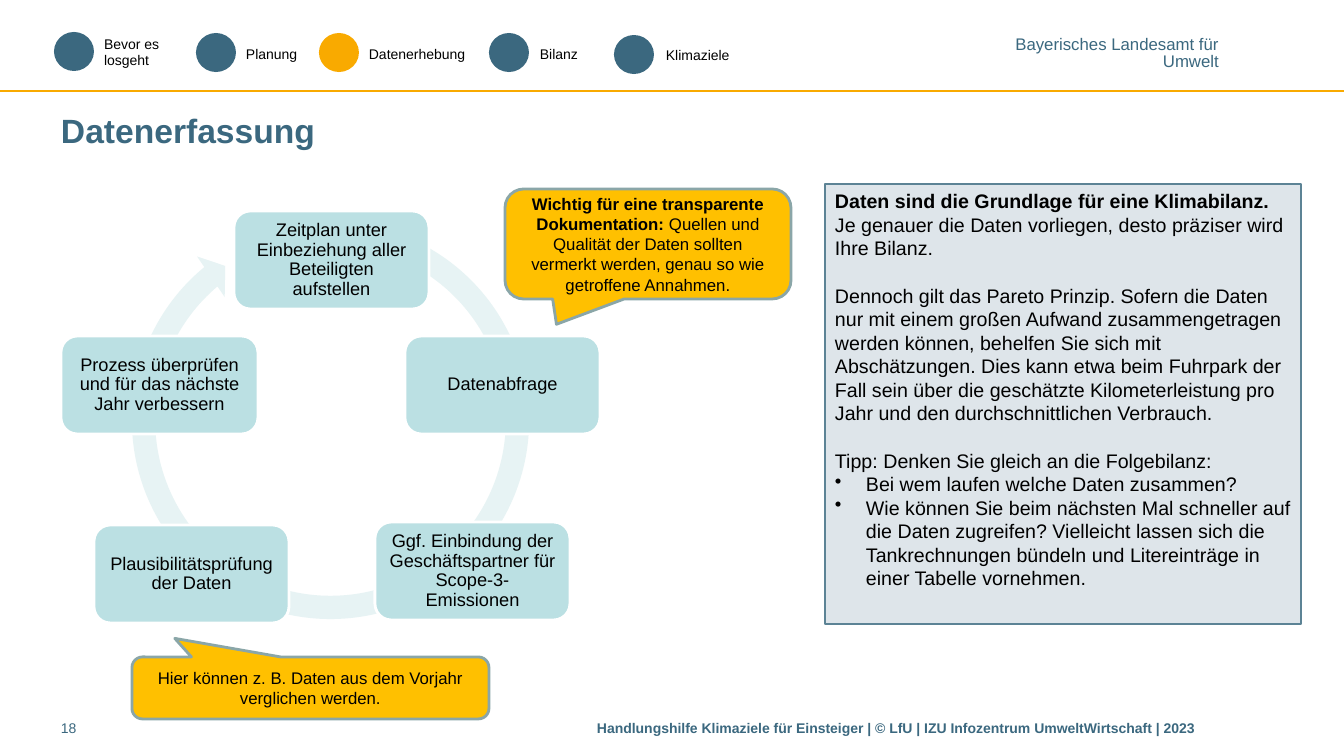
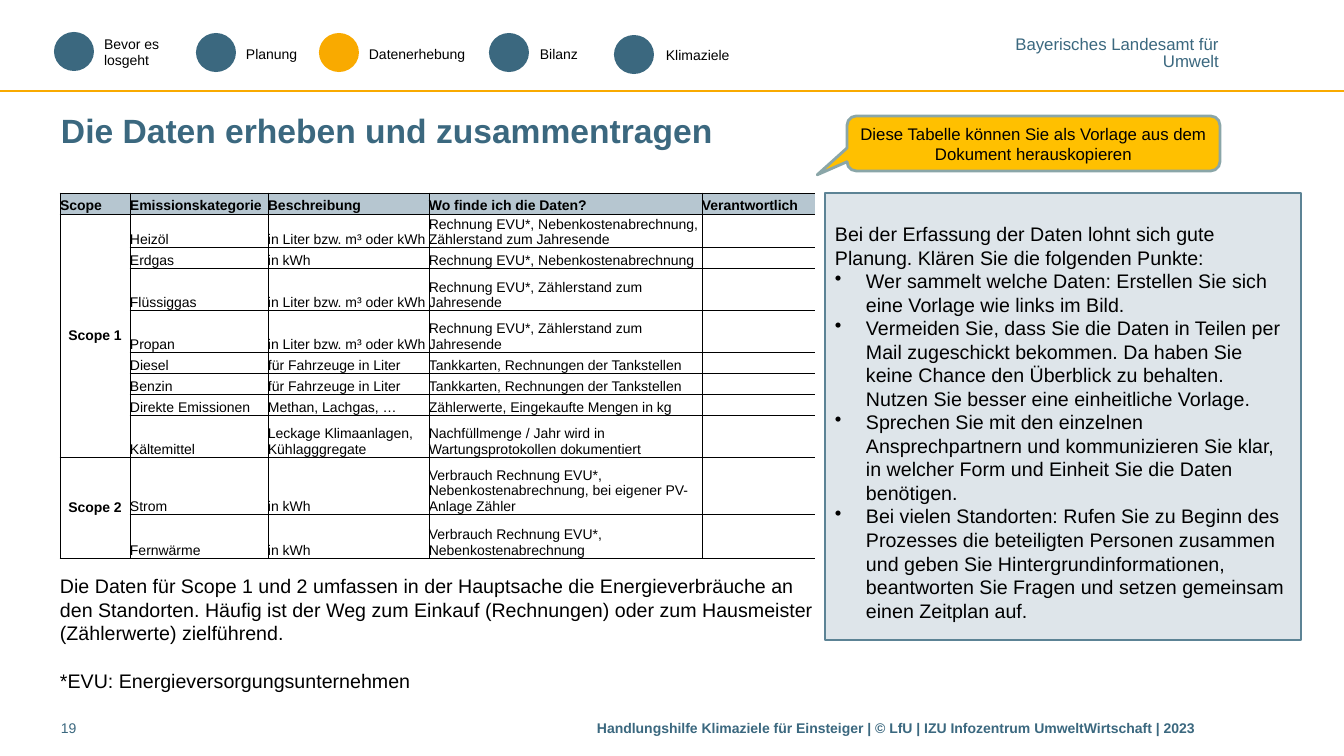
from lxml import etree
from pptx import Presentation
from pptx.dml.color import RGBColor
from pptx.enum.shapes import MSO_CONNECTOR, MSO_SHAPE
from pptx.enum.text import MSO_ANCHOR, PP_ALIGN
from pptx.oxml.ns import qn
from pptx.util import Emu, Pt

OVAL, RECT, ROUND = MSO_SHAPE.OVAL, MSO_SHAPE.RECTANGLE, MSO_SHAPE.ROUNDED_RECTANGLE
CALL, ARROW = MSO_SHAPE.ROUNDED_RECTANGULAR_CALLOUT, MSO_SHAPE.CIRCULAR_ARROW
LINE = MSO_CONNECTOR.STRAIGHT
LEFT, MID, RIGHT = PP_ALIGN.LEFT, PP_ALIGN.CENTER, PP_ALIGN.RIGHT
TOP, CENTER, LOW = MSO_ANCHOR.TOP, MSO_ANCHOR.MIDDLE, MSO_ANCHOR.BOTTOM

BLACK = RGBColor(0x00, 0x00, 0x00)
WHITE = RGBColor(0xFF, 0xFF, 0xFF)
BLUE = RGBColor(0x3B, 0x68, 0x7F)
AMBER = RGBColor(0xF9, 0xAA, 0x00)
GOLD = RGBColor(0xFF, 0xC0, 0x00)
SAGE = RGBColor(0x8A, 0xA6, 0xA8)
PALE = RGBColor(0xDE, 0xE5, 0xEA)
STEEL = RGBColor(0x5C, 0x83, 0x95)
AQUA = RGBColor(0xBB, 0xE0, 0xE3)
MIST = RGBColor(0xE7, 0xF3, 0xF4)
HEAD = RGBColor(0xB6, 0xC6, 0xD0)

FONT = "Arial"
WIDE, HIGH = 1344, 756
PAD = (10, 5, 10, 5)
FLAT = (0, 5, 0, 5)
NONE = (0, 0, 0, 0)
INDENT = 31
GAP = 17

# Shared content: dot left and top, label left and top, label width, lines
STEPS = [
    (54, 32, 94, 30, 83, ["Bevor es", "losgeht"]),
    (196, 33, 236, 41, 150, ["Planung"]),
    (319, 33, 359, 41, 150, ["Datenerhebung"]),
    (489, 33, 530, 41, 150, ["Bilanz"]),
    (614, 35, 656, 42, 150, ["Klimaziele"]),
]
ACTIVE = 2
OFFICE = ["Bayerisches Landesamt für", "Umwelt"]
FOOTER = ("Handlungshilfe Klimaziele für Einsteiger | © LfU | "
          "IZU Infozentrum UmweltWirtschaft | 2023")

# Paragraphs are plain strings or (kind, bold part, plain part)
CYCLE = [
    (234, 211, 195, "Zeitplan unter Einbeziehung aller Beteiligten aufstellen"),
    (405, 336, 195, "Datenabfrage"),
    (375, 522, 195, "Ggf. Einbindung der Geschäftspartner für Scope-3-Emissionen"),
    (94, 525, 195, "Plausibilitätsprüfung der Daten"),
    (61, 336, 197, "Prozess überprüfen und für das nächste Jahr verbessern"),
]
RING = (0.055, 3.31, 138.14, 173.63, 0.058)
BASIS = [
    ("", "Daten sind die Grundlage für eine Klimabilanz.",
     " Je genauer die Daten vorliegen, desto präziser wird Ihre Bilanz."),
    ("gap", "", "Dennoch gilt das Pareto Prinzip. Sofern die Daten nur mit einem "
     "großen Aufwand zusammengetragen werden können, behelfen Sie sich mit "
     "Abschätzungen. Dies kann etwa beim Fuhrpark der Fall sein über die "
     "geschätzte Kilometerleistung pro Jahr und den durchschnittlichen Verbrauch."),
    ("gap", "", "Tipp: Denken Sie gleich an die Folgebilanz:"),
    ("dot", "", "Bei wem laufen welche Daten zusammen?"),
    ("dot", "", "Wie können Sie beim nächsten Mal schneller auf die Daten zugreifen? "
     "Vielleicht lassen sich die Tankrechnungen bündeln und Litereinträge in "
     "einer Tabelle vornehmen."),
]
PLAN = [
    "Bei der Erfassung der Daten lohnt sich gute Planung. Klären Sie die "
    "folgenden Punkte:",
    ("dot", "", "Wer sammelt welche Daten: Erstellen Sie sich eine Vorlage wie "
     "links im Bild."),
    ("dot", "", "Vermeiden Sie, dass Sie die Daten in Teilen per Mail zugeschickt "
     "bekommen. Da haben Sie keine Chance den Überblick zu behalten. Nutzen Sie "
     "besser eine einheitliche Vorlage."),
    ("dot", "", "Sprechen Sie mit den einzelnen Ansprechpartnern und kommunizieren "
     "Sie klar, in welcher Form und Einheit Sie die Daten benötigen."),
    ("dot", "", "Bei vielen Standorten: Rufen Sie zu Beginn des Prozesses die "
     "beteiligten Personen zusammen und geben Sie Hintergrundinformationen, "
     "beantworten Sie Fragen und setzen gemeinsam einen Zeitplan auf."),
]
QUALITY = [("", "Wichtig für eine transparente Dokumentation: ",
            "Quellen und Qualität der Daten sollten vermerkt werden, genau so wie "
            "getroffene Annahmen.")]
COMPARE = ["Hier können z. B. Daten aus dem Vorjahr verglichen werden."]
REUSE = ["Diese Tabelle können Sie als Vorlage aus dem Dokument herauskopieren"]
NOTE = [
    "Die Daten für Scope 1 und 2 umfassen in der Hauptsache die Energieverbräuche "
    "an den Standorten. Häufig ist der Weg zum Einkauf (Rechnungen) oder zum "
    "Hausmeister (Zählerwerte) zielführend.",
    ("gap", "", "*EVU: Energieversorgungsunternehmen"),
]
COLS = [70, 138, 161, 273, 113]
ROWS = [21, 33, 21, 42, 42, 21, 21, 21, 42, 57, 44]
SPANS = [(1, 8), (9, 10)]
LITER, FUEL = "in Liter bzw. m³ oder kWh", "für Fahrzeuge in Liter"
METER = "Rechnung EVU*, Zählerstand zum Jahresende"
CARDS = "Tankkarten, Rechnungen der Tankstellen"
DATA = [
    ("Scope", "Emissionskategorie", "Beschreibung", "Wo finde ich die Daten?",
     "Verantwortlich"),
    ("Scope 1", "Heizöl", LITER,
     "Rechnung EVU*, Nebenkostenabrechnung, Zählerstand zum Jahresende", ""),
    ("", "Erdgas", "in kWh", "Rechnung EVU*, Nebenkostenabrechnung", ""),
    ("", "Flüssiggas", LITER, METER, ""),
    ("", "Propan", LITER, METER, ""),
    ("", "Diesel", FUEL, CARDS, ""),
    ("", "Benzin", FUEL, CARDS, ""),
    ("", "Direkte Emissionen", "Methan, Lachgas, …",
     "Zählerwerte, Eingekaufte Mengen in kg", ""),
    ("", "Kältemittel", "Leckage Klimaanlagen, Kühlagggregate",
     "Nachfüllmenge / Jahr wird in Wartungsprotokollen dokumentiert", ""),
    ("Scope 2", "Strom", "in kWh", "Verbrauch Rechnung EVU*, "
     "Nebenkostenabrechnung, bei eigener PV-Anlage Zähler", ""),
    ("", "Fernwärme", "in kWh", "Verbrauch Rechnung EVU*, Nebenkostenabrechnung", ""),
]


def px(n):
    return Emu(round(n * 12192000 / WIDE))


# Text
def style(run, size, color, bold):
    font = run.font
    font.name, font.size, font.bold = FONT, Pt(size), bold
    font.color.rgb = color


def bullet(para):
    props = para._p.get_or_add_pPr()
    props.set("marL", str(px(INDENT)))
    props.set("indent", str(-px(INDENT)))
    etree.SubElement(props, qn("a:buChar")).set("char", "•")


def write(shape, paras, size, color=BLACK, bold=False, align=LEFT,
          anchor=TOP, pad=PAD, wrap=True, lead=None):
    frame = shape.text_frame
    frame.word_wrap, frame.vertical_anchor = wrap, anchor
    (frame.margin_left, frame.margin_top,
     frame.margin_right, frame.margin_bottom) = map(px, pad)
    for i, item in enumerate(paras):
        kind, strong, plain = ("", "", item) if isinstance(item, str) else item
        para = frame.add_paragraph() if i else frame.paragraphs[0]
        if kind == "dot":
            bullet(para)
        para.alignment = align
        if kind == "gap":
            para.space_before = Pt(GAP)
        if lead:
            para.line_spacing = lead
        for text, heavy in ((strong, True), (plain, bold)):
            if text:
                run = para.add_run()
                run.text = text
                style(run, size, color, heavy)


# Shapes
def label(slide, box, paras, size, **look):
    shape = slide.shapes.add_textbox(*map(px, box))
    write(shape, paras, size, **look)


def draw(slide, kind, box, fill, line=None, width=2, adj=()):
    shape = slide.shapes.add_shape(kind, *map(px, box))
    shape.shadow.inherit = False
    shape.fill.solid()
    shape.fill.fore_color.rgb = fill
    if line is None:
        shape.line.fill.background()
    else:
        shape.line.color.rgb = line
        shape.line.width = Pt(width)
    for i, value in enumerate(adj):
        shape.adjustments[i] = value
    return shape


def callout(slide, box, tip, paras):
    shape = draw(slide, CALL, box, GOLD, SAGE, adj=(*tip, 0.17))
    write(shape, paras, 12, align=MID, anchor=CENTER)


def panel(slide, top, high, paras, pad=PAD):
    shape = draw(slide, RECT, (825, top, 476, high), PALE, STEEL, 1)
    write(shape, paras, 14, pad=pad)


# Header and footer, kept in the layout
def furnish(slide, layout):
    for spot in list(layout.placeholders):
        if spot.placeholder_format.idx:
            spot._element.getparent().remove(spot._element)
    rule = slide.shapes.add_connector(LINE, 0, px(91), px(WIDE), px(91))
    rule.line.color.rgb, rule.line.width = AMBER, Pt(2)
    etree.SubElement(rule._element.spPr, qn("a:effectLst"))
    label(slide, (1015, 37, 204, 34), OFFICE, 12, color=BLUE, align=RIGHT,
          pad=NONE, wrap=False, lead=0.85)
    for i, (x, y, left, top, wide, lines) in enumerate(STEPS):
        draw(slide, OVAL, (x, y, 40, 39), AMBER if i == ACTIVE else BLUE)
        label(slide, (left, top, wide, 17 * len(lines) + 10), lines, 10)
    label(slide, (597, 714, 705, 31), [FOOTER], 10, color=BLUE, bold=True, pad=FLAT)
    for shape in list(slide.shapes):
        if not shape.is_placeholder:
            layout.shapes._spTree.append(shape._element)


def start(deck, layout, title, number):
    slide = deck.slides.add_slide(layout)
    if len(deck.slides) == 1:
        furnish(slide, layout)
    head = slide.shapes.title
    head.left, head.top, head.width, head.height = map(px, (61, 103, 1241, 55))
    write(head, [title], 24, color=BLUE, bold=True, anchor=CENTER, pad=FLAT)
    label(slide, (61, 714, 71, 31), [number], 10, color=BLUE, pad=FLAT)
    return slide


# Table
def border(cell, sides):
    props = cell._tc.get_or_add_tcPr()
    for side in "LRTB":
        line = etree.SubElement(props, qn("a:ln" + side), w=str(Pt(0.5)))
        if side in sides:
            fill = etree.SubElement(line, qn("a:solidFill"))
            etree.SubElement(fill, qn("a:srgbClr"), val=str(BLACK))
        else:
            etree.SubElement(line, qn("a:noFill"))


def grid(slide, left, top):
    table = slide.shapes.add_table(len(ROWS), len(COLS), px(left), px(top),
                                   px(sum(COLS)), px(sum(ROWS))).table
    table.horz_banding = False
    for col, wide in zip(table.columns, COLS):
        col.width = px(wide)
    for row, high in zip(table.rows, ROWS):
        row.height = px(high)
    for first, last in SPANS:
        table.cell(first, 0).merge(table.cell(last, 0))
    for r, texts in enumerate(DATA):
        for c, text in enumerate(texts):
            cell = table.cell(r, c)
            border(cell, "LTB" if c == len(COLS) - 1 else "LRTB")
            if r:
                cell.fill.background()
            else:
                cell.fill.solid()
                cell.fill.fore_color.rgb = HEAD
            scope = r > 0 and c == 0
            cell.vertical_anchor = CENTER if scope else LOW
            cell.margin_left = cell.margin_right = 0
            cell.margin_top = cell.margin_bottom = 0
            cell.text_frame.text = text
            para = cell.text_frame.paragraphs[0]
            para.alignment = MID if scope else LEFT
            para.font.size = Pt(10)
            for run in para.runs:
                style(run, 10, BLACK, r == 0 or c == 0)


def main():
    deck = Presentation()
    deck.slide_width, deck.slide_height = px(WIDE), px(HIGH)
    layout = deck.slide_layouts[5]

    # Data collection cycle
    slide = start(deck, layout, "Datenerfassung", "18")
    panel(slide, 184, 440, BASIS)
    draw(slide, ARROW, (119, 209, 423, 423), MIST, adj=RING)
    for x, y, wide, text in CYCLE:
        node = draw(slide, ROUND, (x, y, wide, 98), AQUA, WHITE)
        write(node, [text], 13, align=MID, anchor=CENTER, lead=0.9)
    callout(slide, (132, 657, 357, 62), (-0.38, -0.8), COMPARE)
    callout(slide, (505, 189, 286, 110), (-0.32, 0.73), QUALITY)

    # Data table
    slide = start(deck, layout, "Die Daten erheben und zusammentragen", "19")
    panel(slide, 193, 447, PLAN, pad=(10, 29, 10, 5))
    grid(slide, 60, 193)
    label(slide, (50, 569, 778, 129), NOTE, 14)
    callout(slide, (847, 116, 373, 55), (-0.58, 0.57), REUSE)

    deck.save("out.pptx")


if __name__ == "__main__":
    main()
